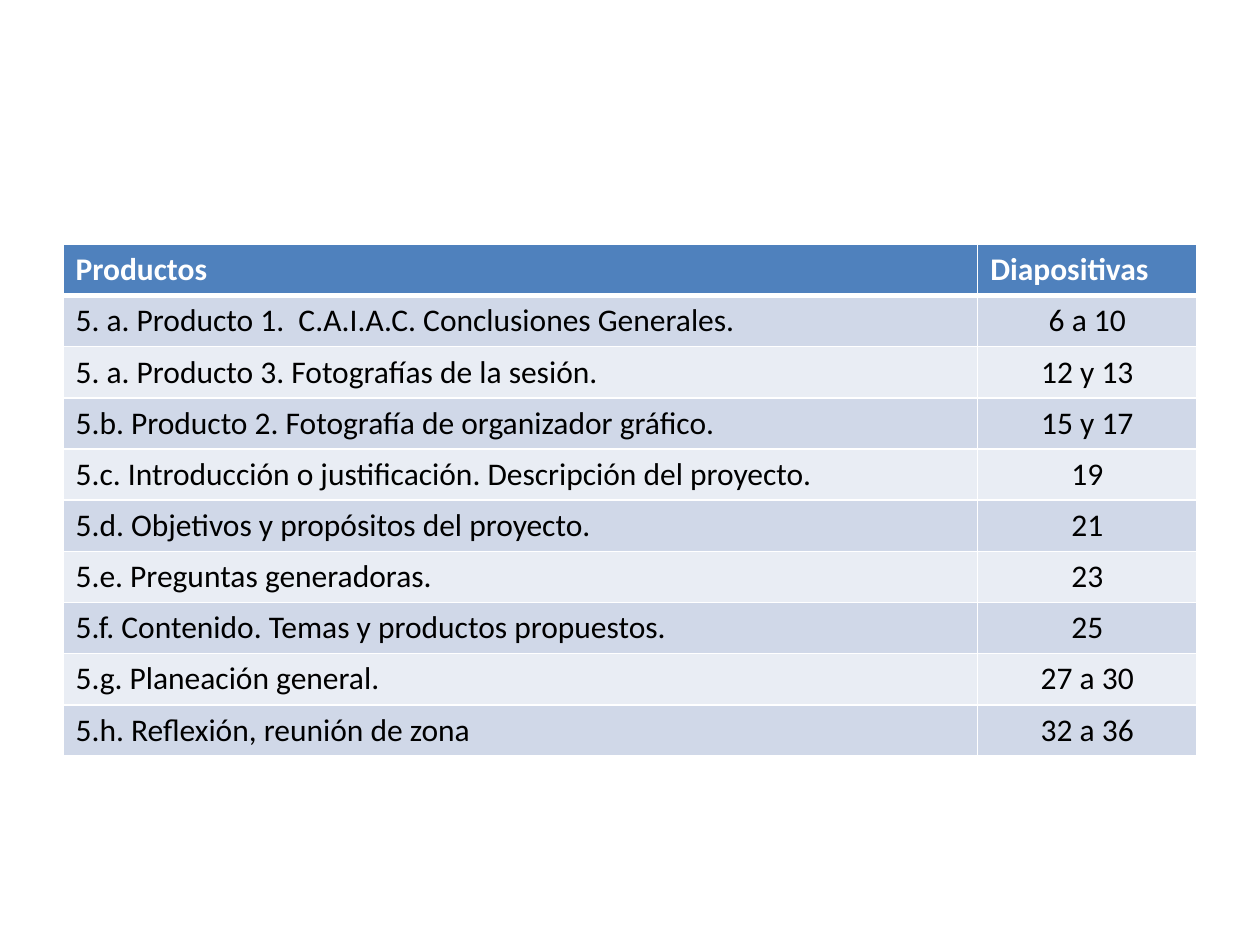
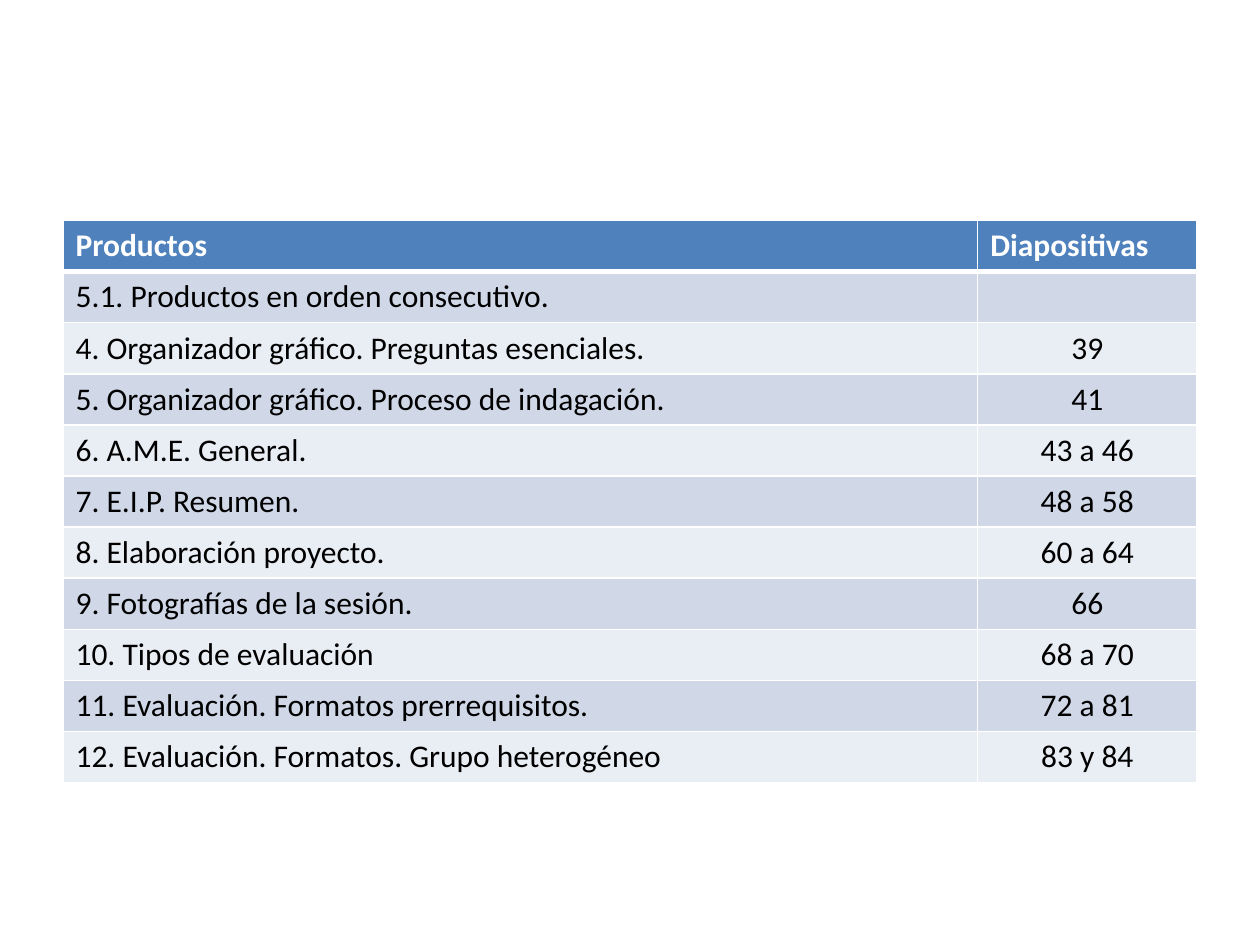
from dataclasses import dataclass
from lxml.etree import SubElement
from pptx import Presentation
from pptx.dml.color import RGBColor
from pptx.enum.text import PP_ALIGN
from pptx.oxml.ns import qn
from pptx.util import Inches, Pt

HEAD = ("Productos", "Diapositivas")
PAGES = [
    {"top": 1.94, "height": 4.06, "rows": [
        ("5. a. Producto 1.  C.A.I.A.C. Conclusiones Generales.", "6 a 10"),
        ("5. a. Producto 3. Fotografías de la sesión.", "12 y 13"),
        ("5.b. Producto 2. Fotografía de organizador gráfico.", "15 y 17"),
        ("5.c. Introducción o justificación. Descripción del proyecto.", "19"),
        ("5.d. Objetivos y propósitos del proyecto.", "21"),
        ("5.e. Preguntas generadoras.", "23"),
        ("5.f. Contenido. Temas y productos propuestos.", "25"),
        ("5.g. Planeación general.", "27 a 30"),
        ("5.h. Reflexión, reunión de zona", "32 a 36"),
    ]},
    {"top": 1.75, "height": 4.46, "rows": [
        ("5.1. Productos en orden consecutivo.", ""),
        ("4. Organizador gráfico. Preguntas esenciales.", "39"),
        ("5. Organizador gráfico. Proceso de indagación.", "41"),
        ("6. A.M.E. General.", "43 a 46"),
        ("7. E.I.P. Resumen.", "48 a 58"),
        ("8. Elaboración proyecto.", "60 a 64"),
        ("9. Fotografías de la sesión.", "66"),
        ("10. Tipos de evaluación", "68 a 70"),
        ("11. Evaluación. Formatos prerrequisitos.", "72 a 81"),
        ("12. Evaluación. Formatos. Grupo heterogéneo", "83 y 84"),
    ]},
]
LEFT = 0.5
WIDTHS = (7.26, 1.74)


@dataclass(frozen=True)
class Theme:
    font: str = "Calibri"
    size: int = 18
    head: str = "4F81BD"
    bands: tuple = ("E9EDF4", "D0D8E8")
    light: str = "FFFFFF"
    dark: str = "000000"
    thin: int = 1
    thick: int = 3


THEME = Theme()


def add_edges(cell, row):
    props = cell._tc.get_or_add_tcPr()
    thick = {0: "lnB", 1: "lnT"}.get(row)
    for side in ("lnL", "lnR", "lnT", "lnB"):
        width = Pt(THEME.thick if side == thick else THEME.thin)
        line = SubElement(props, qn(f"a:{side}"), w=str(width))
        fill = SubElement(line, qn("a:solidFill"))
        SubElement(fill, qn("a:srgbClr"), val=THEME.light)


def fill_cell(cell, text, row, col):
    head = row == 0
    add_edges(cell, row)
    cell.fill.solid()
    shade = THEME.head if head else THEME.bands[row % 2]
    cell.fill.fore_color.rgb = RGBColor.from_string(shade)
    cell.text = text
    para = cell.text_frame.paragraphs[0]
    para.alignment = PP_ALIGN.CENTER if col and not head else PP_ALIGN.LEFT
    font = para.font
    font.name, font.size, font.bold = THEME.font, Pt(THEME.size), head
    font.color.rgb = RGBColor.from_string(THEME.light if head else THEME.dark)


def add_index(deck, page):
    slide = deck.slides.add_slide(deck.slide_layouts[6])
    rows = [HEAD, *page["rows"]]
    table = slide.shapes.add_table(
        len(rows), len(HEAD), Inches(LEFT), Inches(page["top"]),
        Inches(sum(WIDTHS)), Inches(page["height"])).table
    for col, width in enumerate(WIDTHS):
        table.columns[col].width = Inches(width)
    for row, texts in enumerate(rows):
        for col, text in enumerate(texts):
            fill_cell(table.cell(row, col), text, row, col)


def main():
    deck = Presentation()
    deck.slide_width, deck.slide_height = Inches(10), Inches(7.5)
    for page in PAGES:
        add_index(deck, page)
    deck.save("out.pptx")


if __name__ == "__main__":
    main()
